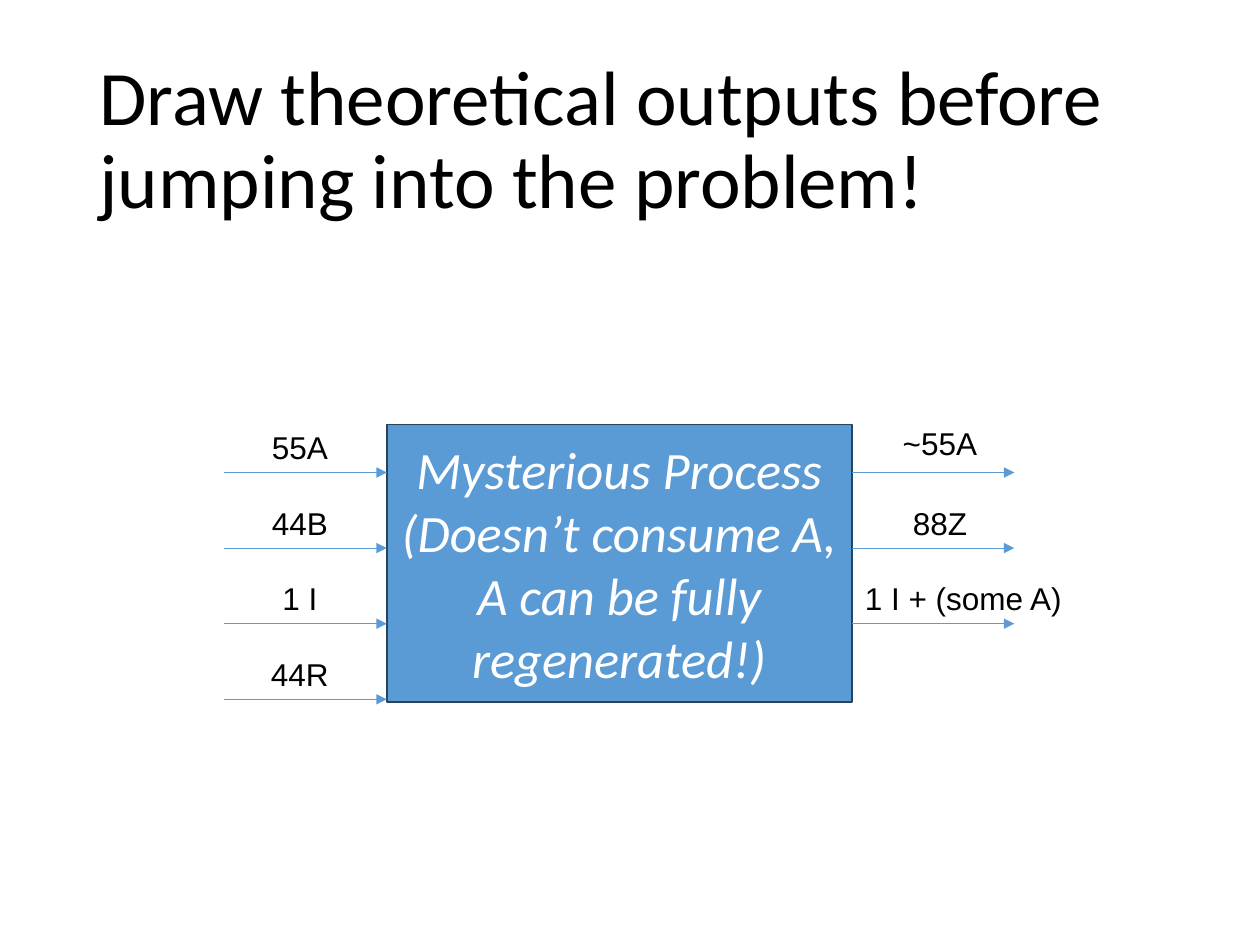
from dataclasses import dataclass

from lxml import etree
from pptx import Presentation, util as u
from pptx.dml.color import RGBColor
from pptx.enum import shapes, text
from pptx.oxml.ns import qn

BLACK = RGBColor(0x00, 0x00, 0x00)
WHITE = RGBColor(0xFF, 0xFF, 0xFF)
BLUE = RGBColor(0x5B, 0x9B, 0xD5)
NAVY = RGBColor(0x28, 0x44, 0x5D)

WIDE, HIGH = 10, 7.5
LEFT, BOX, EDGE, RIGHT = 1.78, 3.07, 6.76, 8.05  # column lines of the flow grid
TOP, STEP = 3.75, 0.6  # first arrow row and row pitch
LABEL = 0.4  # label height


@dataclass(frozen=True)
class Style:
    font: str
    size: int
    color: RGBColor
    italic: bool = False


@dataclass(frozen=True)
class Flow:
    label: str
    row: int
    start: float
    end: float
    left: float
    width: float = 1.2
    lift: float = LABEL


HEAD = Style("Calibri", 44, BLACK)
BODY = Style("Calibri", 30, WHITE, True)
NOTE = Style("Arial", 18, BLACK)

FLOWS = [Flow(name, row, LEFT, BOX, LEFT)
         for row, name in enumerate(("55A", "44B", "1 I", "44R"))]
FLOWS += [
    Flow("~55A", 0, EDGE, RIGHT, 6.86, lift=0.43),
    Flow("88Z", 1, EDGE, RIGHT, 6.86),
    Flow("1 I + (some A)", 2, EDGE, RIGHT, 6.34, 2.61),
]


def write(frame, lines: list[str], style: Style, align, anchor, space: float = 1) -> None:
    frame.word_wrap = True
    frame.vertical_anchor = anchor
    for i, line in enumerate(lines):
        para = frame.add_paragraph() if i else frame.paragraphs[0]
        para.alignment = align
        para.line_spacing = space
        run = para.add_run()
        run.text = line
        run.font.name = style.font
        run.font.size = u.Pt(style.size)
        run.font.italic = style.italic
        run.font.color.rgb = style.color


def place(*sizes: float) -> list[int]:
    return [u.Inches(size) for size in sizes]


def add_title(slide) -> None:
    area = slide.shapes.add_textbox(*place(0.69, 0.4, 8.62, 1.45))
    write(area.text_frame, ["Draw theoretical outputs before jumping into the problem!"],
          HEAD, text.PP_ALIGN.LEFT, text.MSO_ANCHOR.MIDDLE, 0.9)


def add_process(slide) -> None:
    box = slide.shapes.add_shape(shapes.MSO_SHAPE.RECTANGLE,
                                 *place(BOX, 3.37, EDGE - BOX, 2.2))
    box.shadow.inherit = False
    box.fill.solid()
    box.fill.fore_color.rgb = BLUE
    box.line.color.rgb = NAVY
    box.line.width = u.Pt(1)
    write(box.text_frame,
          ["Mysterious Process", "(Doesn’t consume A, A can be fully regenerated!)"],
          BODY, text.PP_ALIGN.CENTER, text.MSO_ANCHOR.MIDDLE)


def add_flow(slide, flow: Flow) -> None:
    """Draw one arrow with its label above it."""
    y = TOP + flow.row * STEP
    arrow = slide.shapes.add_connector(shapes.MSO_CONNECTOR.STRAIGHT,
                                       *place(flow.start, y, flow.end, y))
    arrow.line.color.rgb = BLUE
    arrow.line.width = u.Pt(0.5)
    etree.SubElement(arrow.line._get_or_add_ln(), qn("a:tailEnd"), type="triangle")
    etree.SubElement(arrow._element.spPr, qn("a:effectLst"))
    note = slide.shapes.add_textbox(*place(flow.left, y - flow.lift, flow.width, LABEL))
    write(note.text_frame, [flow.label], NOTE, text.PP_ALIGN.CENTER, text.MSO_ANCHOR.TOP)


def main() -> None:
    deck = Presentation()
    deck.slide_width, deck.slide_height = place(WIDE, HIGH)
    slide = deck.slides.add_slide(deck.slide_layouts[6])
    add_title(slide)
    add_process(slide)
    for flow in FLOWS:
        add_flow(slide, flow)
    deck.save("out.pptx")


if __name__ == "__main__":
    main()
